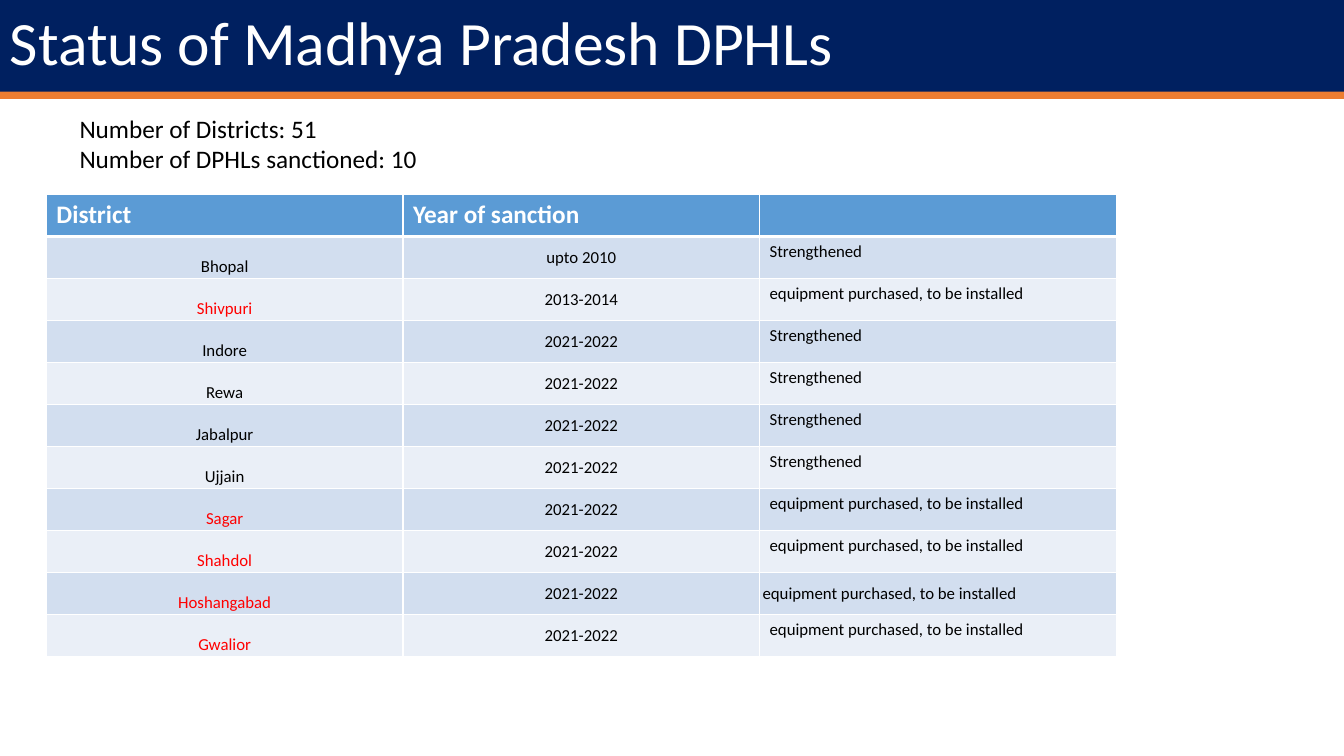
from dataclasses import dataclass

from lxml.etree import SubElement
from pptx import Presentation
from pptx.dml.color import RGBColor
from pptx.enum.shapes import MSO_SHAPE
from pptx.enum.text import MSO_ANCHOR, MSO_AUTO_SIZE, PP_ALIGN
from pptx.oxml.ns import qn
from pptx.util import Inches, Pt


@dataclass(frozen=True)
class Theme:
    font: str = "Calibri"
    navy: str = "002060"
    orange: str = "ED7D31"
    blue: str = "5B9BD5"
    bands: tuple = ("D2DEEF", "EAEFF7")
    white: str = "FFFFFF"
    black: str = "000000"
    red: str = "FF0000"
    title_size: int = 44
    heading_size: int = 18
    body_size: int = 12


theme = Theme()


def write(paragraph, text, size, color, bold=False):
    run = paragraph.add_run()
    run.text = text
    run.font.name = theme.font
    run.font.size = Pt(size)
    run.font.bold = bold
    run.font.color.rgb = RGBColor.from_string(color)


def style_cell(cell, fill, top, bottom):
    properties = cell._tc.get_or_add_tcPr()
    for side, width in (("L", 1), ("R", 1), ("T", top), ("B", bottom)):
        border = SubElement(properties, qn(f"a:ln{side}"), w=str(Pt(width)))
        solid = SubElement(border, qn("a:solidFill"))
        SubElement(solid, qn("a:srgbClr"), val=theme.white)
    cell.fill.solid()
    cell.fill.fore_color.rgb = RGBColor.from_string(fill)


prs = Presentation()
prs.slide_width = Inches(13.33)
prs.slide_height = Inches(7.5)
slide = prs.slides.add_slide(prs.slide_layouts[6])

accent_stripe = slide.shapes.add_shape(
    MSO_SHAPE.RECTANGLE, 0, Inches(0.91), prs.slide_width, Inches(0.07))
accent_stripe.line.color.rgb = RGBColor.from_string(theme.orange)
accent_stripe.line.width = Pt(1)
title_bar = slide.shapes.add_shape(
    MSO_SHAPE.RECTANGLE, 0, 0, prs.slide_width, Inches(0.91))
title_bar.line.fill.background()
for bar, color in ((accent_stripe, theme.orange), (title_bar, theme.navy)):
    bar.shadow.inherit = False
    bar.fill.solid()
    bar.fill.fore_color.rgb = RGBColor.from_string(color)

title_bar.text_frame.vertical_anchor = MSO_ANCHOR.MIDDLE
title = title_bar.text_frame.paragraphs[0]
title.alignment = PP_ALIGN.LEFT
title.line_spacing = 0.9
write(title, "Status of Madhya Pradesh DPHLs", theme.title_size, theme.white)

STRENGTHENED = "Strengthened"
PURCHASED = "equipment purchased, to be installed"
headers = ("District", "Year of sanction", "")
districts = (
    ("Bhopal", "upto 2010", STRENGTHENED),
    ("Shivpuri", "2013-2014", PURCHASED),
    ("Indore", "2021-2022", STRENGTHENED),
    ("Rewa", "2021-2022", STRENGTHENED),
    ("Jabalpur", "2021-2022", STRENGTHENED),
    ("Ujjain", "2021-2022", STRENGTHENED),
    ("Sagar", "2021-2022", PURCHASED),
    ("Shahdol", "2021-2022", PURCHASED),
    ("Hoshangabad", "2021-2022", PURCHASED),
    ("Gwalior", "2021-2022", PURCHASED),
)

sanctions = slide.shapes.add_table(
    len(districts) + 1, len(headers),
    Inches(0.46), Inches(1.93), Inches(10.61), Inches(4.59)).table

for column, header in enumerate(headers):
    cell = sanctions.cell(0, column)
    style_cell(cell, theme.blue, 1, 3)
    if header:
        write(cell.text_frame.paragraphs[0], header,
              theme.heading_size, theme.white, True)

anchors = (MSO_ANCHOR.BOTTOM, MSO_ANCHOR.MIDDLE, MSO_ANCHOR.MIDDLE)
for row, entry in enumerate(districts, 1):
    for column, text in enumerate(entry):
        cell = sanctions.cell(row, column)
        style_cell(cell, theme.bands[(row - 1) % 2], 3 if row == 1 else 1, 1)
        if column < 2 or entry[0] == "Hoshangabad":
            cell.vertical_anchor = anchors[column]
            cell.margin_left = cell.margin_right = Inches(0.03)
            cell.margin_top = cell.margin_bottom = Inches(0.02)
        paragraph = cell.text_frame.paragraphs[0]
        if column < 2:
            paragraph.alignment = PP_ALIGN.CENTER
        pending = column == 0 and entry[2] == PURCHASED
        write(paragraph, text, theme.body_size,
              theme.red if pending else theme.black)

summary = slide.shapes.add_textbox(
    Inches(0.69), Inches(1.07), Inches(6.75), Inches(0.71)).text_frame
summary.word_wrap = True
summary.auto_size = MSO_AUTO_SIZE.SHAPE_TO_FIT_TEXT
write(summary.paragraphs[0], "Number of Districts: 51",
      theme.heading_size, theme.black)
write(summary.add_paragraph(), "Number of DPHLs sanctioned: 10",
      theme.heading_size, theme.black)

prs.save("out.pptx")
